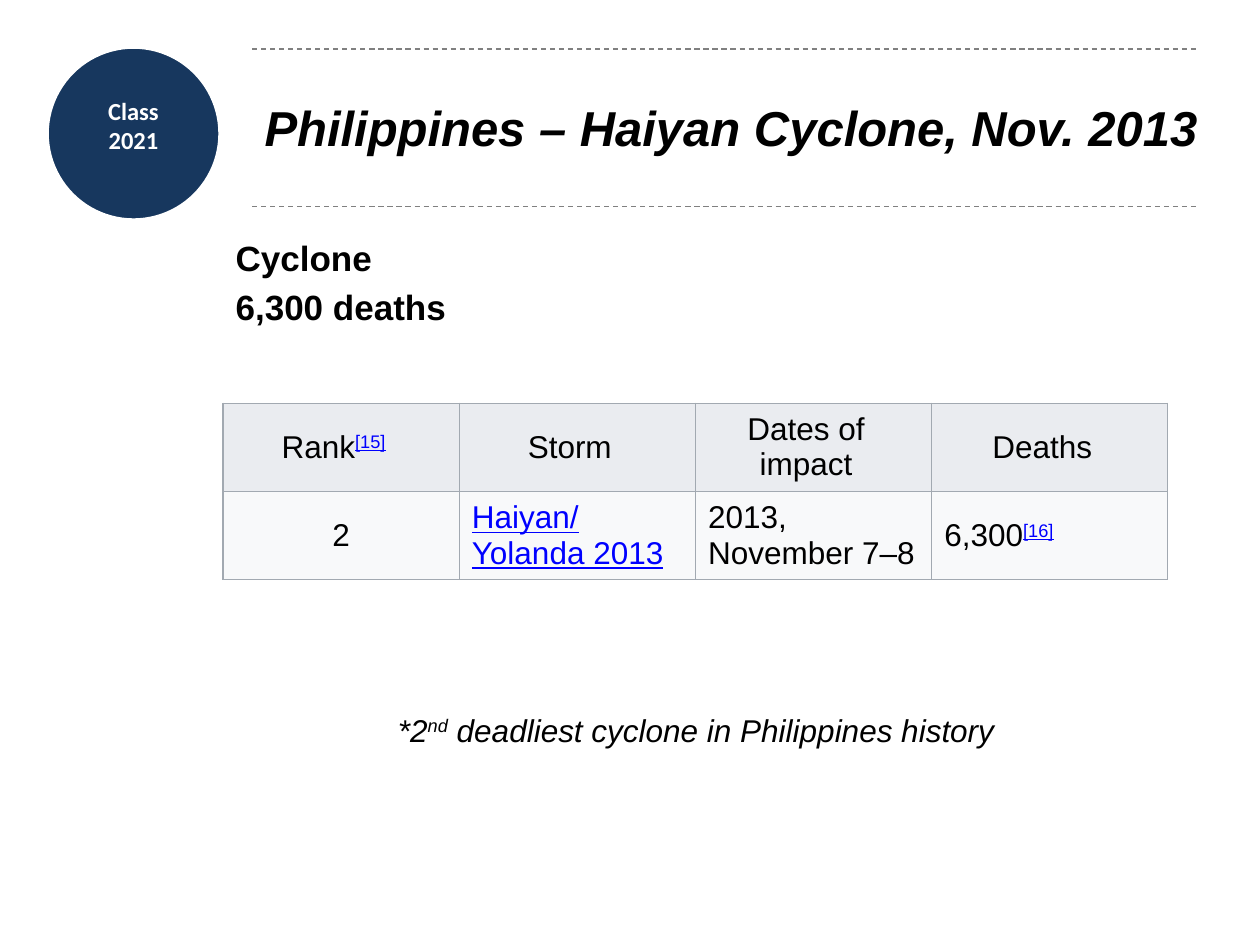
import dataclasses
import typing

import lxml.etree
import pptx
import pptx.dml.color
import pptx.enum.dml
import pptx.enum.shapes
import pptx.enum.text
import pptx.oxml.ns
import pptx.util

Inches = pptx.util.Inches
ALIGN = pptx.enum.text.PP_ALIGN
ANCHOR = pptx.enum.text.MSO_ANCHOR

COLORS = {
    "white": "FFFFFF",
    "black": "000000",
    "badge": "17375E",
    "rule": "808080",
    "link": "0000FF",
    "border": "A2A9B1",
    "header": "EAECF0",
    "row": "F8F9FA",
}


@dataclasses.dataclass
class Cell:
    text: str
    reference: str = ""
    align: typing.Any = ALIGN.LEFT
    linked: bool = False


ROWS = [
    [
        Cell("Rank", "[15]", ALIGN.CENTER),
        Cell("Storm", align=ALIGN.CENTER),
        Cell("Dates of impact", align=ALIGN.CENTER),
        Cell("Deaths", align=ALIGN.CENTER),
    ],
    [
        Cell("2", align=ALIGN.CENTER),
        Cell("Haiyan/Yolanda 2013", linked=True),
        Cell("2013, November 7–8"),
        Cell("6,300", "[16]"),
    ],
]


def color(name: str) -> pptx.dml.color.RGBColor:
    return pptx.dml.color.RGBColor.from_string(COLORS[name])


def child(parent: typing.Any, tag: str, **attributes: str) -> typing.Any:
    element = lxml.etree.SubElement(parent, pptx.oxml.ns.qn(tag))
    for name, value in attributes.items():
        element.set(name, value)
    return element


def add_text(paragraph, text, size=18, font="Arial", ink="black", bold=False,
             italic=False, underline=False, superscript=False, align=ALIGN.LEFT) -> None:
    paragraph.alignment = align
    run = paragraph.add_run()
    run.text = text
    run.font.size = pptx.util.Pt(size)
    run.font.name = font
    run.font.color.rgb = color(ink)
    run.font.bold = bold
    run.font.italic = italic
    run.font.underline = underline
    if superscript:
        run._r.get_or_add_rPr().set("baseline", "30000")


def place(shape, left: float, top: float, width: float, height: float) -> None:
    shape.left, shape.top = Inches(left), Inches(top)
    shape.width, shape.height = Inches(width), Inches(height)


def add_badge(slide) -> None:
    badge = slide.shapes.add_shape(
        pptx.enum.shapes.MSO_SHAPE.OVAL, Inches(0.37), Inches(0.37), Inches(1.38), Inches(1.38))
    badge.shadow.inherit = False
    badge.fill.solid()
    badge.fill.fore_color.rgb = color("badge")
    badge.line.color.rgb = color("white")
    badge.line.width = pptx.util.Pt(2.5)
    label = slide.shapes.add_textbox(Inches(0.43), Inches(0.76), Inches(1.26), Inches(0.47))
    frame = label.text_frame
    frame.word_wrap = True
    frame.margin_left = frame.margin_right = frame.margin_top = frame.margin_bottom = 0
    for index, text in enumerate(["Class", "2021"]):
        paragraph = frame.add_paragraph() if index else frame.paragraphs[0]
        add_text(paragraph, text, size=14, font="Calibri", ink="white", bold=True,
                 align=ALIGN.CENTER)


def add_rule(slide, top: float) -> None:
    rule = slide.shapes.add_connector(
        pptx.enum.shapes.MSO_CONNECTOR.STRAIGHT, Inches(2), Inches(top), Inches(9.5), Inches(top))
    rule.line.color.rgb = color("rule")
    rule.line.width = pptx.util.Pt(0.75)
    rule.line.dash_style = pptx.enum.dml.MSO_LINE.DASH
    child(rule._element.spPr, "a:effectLst")


def fill_cell(table_cell, cell: Cell, is_header: bool) -> None:
    table_cell.vertical_anchor = ANCHOR.MIDDLE
    if is_header:
        table_cell.margin_right = Inches(0.22)
    paragraph = table_cell.text_frame.paragraphs[0]
    add_text(paragraph, cell.text, align=cell.align, underline=cell.linked,
             ink="link" if cell.linked else "black")
    if cell.reference:
        add_text(paragraph, cell.reference, align=cell.align, ink="link",
                 underline=True, superscript=True)
    properties = table_cell._tc.get_or_add_tcPr()
    for side in ("a:lnL", "a:lnR", "a:lnT", "a:lnB"):
        border = child(properties, side, w=str(pptx.util.Pt(0.75)))
        child(child(border, "a:solidFill"), "a:srgbClr", val=COLORS["border"])
    table_cell.fill.solid()
    table_cell.fill.fore_color.rgb = color("header" if is_header else "row")


def add_storm_table(slide) -> None:
    table = slide.shapes.add_table(
        len(ROWS), len(ROWS[0]), Inches(1.77), Inches(3.2), Inches(7.5), Inches(1.34)).table
    for row_index, row in enumerate(ROWS):
        for column_index, cell in enumerate(row):
            fill_cell(table.cell(row_index, column_index), cell, row_index == 0)


def add_title(slide) -> None:
    title = slide.shapes.title
    place(title, 2, 0.38, 7.8, 1.25)
    title.text_frame.auto_size = pptx.enum.text.MSO_AUTO_SIZE.NONE
    title.text_frame.vertical_anchor = ANCHOR.MIDDLE
    add_text(title.text_frame.paragraphs[0], "Philippines – Haiyan Cyclone, Nov. 2013",
             size=28, bold=True, italic=True)


def add_summary(slide) -> None:
    body = slide.placeholders[1]
    place(body, 1.77, 1.83, 7.5, 4.58)
    frame = body.text_frame
    frame.auto_size = pptx.enum.text.MSO_AUTO_SIZE.NONE
    for index, text in enumerate(["Cyclone", "6,300 deaths"]):
        paragraph = frame.add_paragraph() if index else frame.paragraphs[0]
        add_text(paragraph, text, size=20, bold=True)
        properties = paragraph._p.get_or_add_pPr()
        properties.set("marL", str(Inches(0.3)))
        properties.set("indent", str(Inches(-0.3)))
        child(properties, "a:buNone")


def add_footnote(slide) -> None:
    note = slide.shapes.add_textbox(Inches(2.96), Inches(5.59), Inches(5.13), Inches(0.4))
    note.text_frame.word_wrap = False
    paragraph = note.text_frame.paragraphs[0]
    for text, raised in [("*2", False), ("nd", True),
                         (" deadliest cyclone in Philippines history", False)]:
        add_text(paragraph, text, italic=True, superscript=raised, align=ALIGN.CENTER)


def main() -> None:
    presentation = pptx.Presentation()
    presentation.slide_width, presentation.slide_height = Inches(10), Inches(7.5)
    slide = presentation.slides.add_slide(presentation.slide_layouts[1])
    add_badge(slide)
    for top in (0.39, 1.64):
        add_rule(slide, top)
    add_title(slide)
    add_storm_table(slide)
    add_summary(slide)
    add_footnote(slide)
    presentation.save("out.pptx")


if __name__ == "__main__":
    main()
